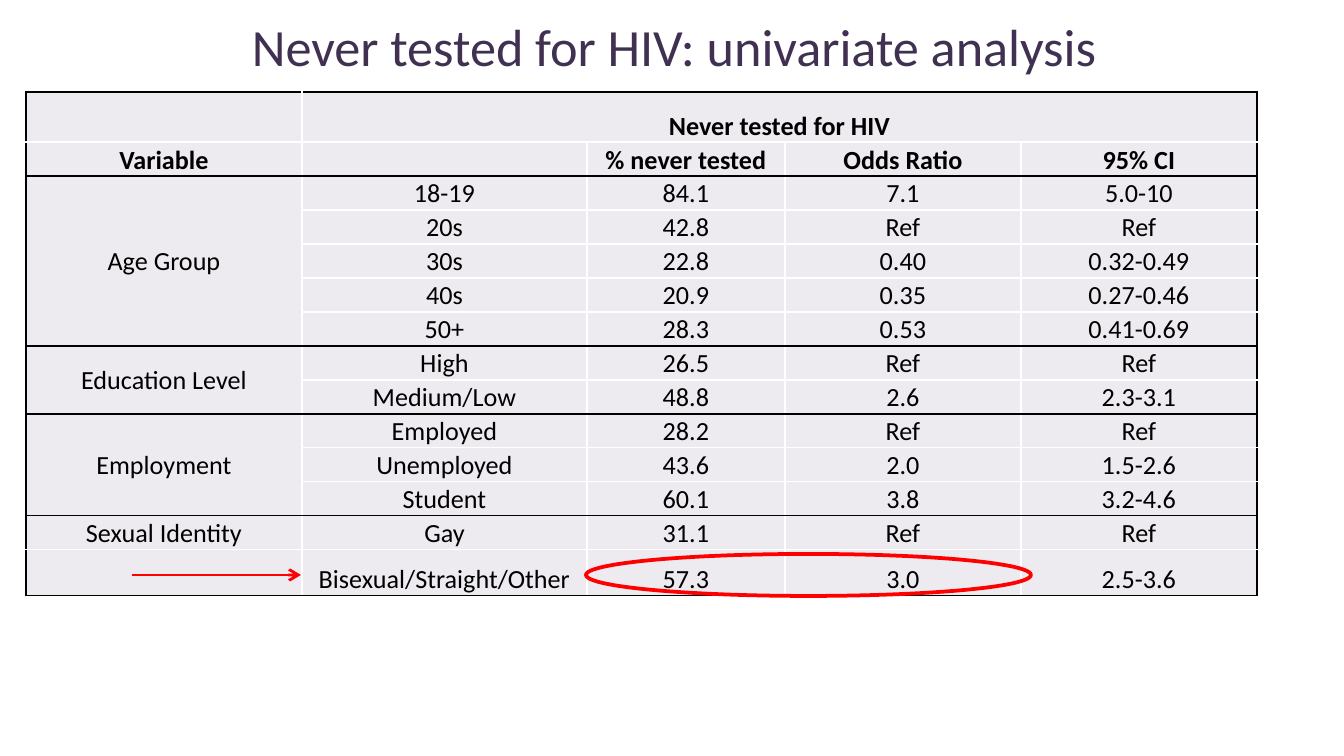
from lxml.etree import SubElement
from pptx import Presentation
from pptx.dml.color import RGBColor
from pptx.enum.shapes import MSO_CONNECTOR as Connector, MSO_SHAPE as Shape
from pptx.enum.text import MSO_ANCHOR as Anchor, PP_ALIGN as Align
from pptx.oxml.ns import qn
from pptx.util import Emu, Pt

PX_PER_INCH = 134.4
FONT = "Calibri"
BLACK = RGBColor(0x00, 0x00, 0x00)
WHITE = RGBColor(0xFF, 0xFF, 0xFF)
PURPLE = RGBColor(0x40, 0x31, 0x52)
LAVENDER = RGBColor(0xED, 0xEA, 0xF0)
RED = RGBColor(0xFF, 0x00, 0x00)

COLUMN_WIDTHS = [276, 285, 198, 236, 236]
ROW_HEIGHTS = [50] + [34] * 12 + [46]
HEADER_ROWS = 2
SECTION_STARTS = {0, 2, 7, 9, 12, len(ROW_HEIGHTS)}
MERGES = [(0, 1, 0, 4), (2, 0, 6, 0), (7, 0, 8, 0), (9, 0, 11, 0)]
ROWS = [
    ["", "Never tested for HIV", "", "", ""],
    ["Variable", "", "% never tested", "Odds Ratio", "95% CI"],
    ["Age Group", "18-19", "84.1", "7.1", "5.0-10"],
    ["", "20s", "42.8", "Ref", "Ref"],
    ["", "30s", "22.8", "0.40", "0.32-0.49"],
    ["", "40s", "20.9", "0.35", "0.27-0.46"],
    ["", "50+", "28.3", "0.53", "0.41-0.69"],
    ["Education Level", "High", "26.5", "Ref", "Ref"],
    ["", "Medium/Low", "48.8", "2.6", "2.3-3.1"],
    ["Employment", "Employed", "28.2", "Ref", "Ref"],
    ["", "Unemployed", "43.6", "2.0", "1.5-2.6"],
    ["", "Student", "60.1", "3.8", "3.2-4.6"],
    ["Sexual Identity", "Gay", "31.1", "Ref", "Ref"],
    ["", "Bisexual/Straight/Other", "57.3", "3.0", "2.5-3.6"],
]


def px(length):
    return Emu(round(length * 914400 / PX_PER_INCH))


def style_paragraph(paragraph, size, color, bold=False):
    paragraph.alignment = Align.CENTER
    font = paragraph.font
    font.name, font.size, font.bold = FONT, Pt(size), bold
    font.color.rgb = color


def add_title(slide, text):
    box = slide.shapes.add_textbox(px(69), px(0), px(1210), px(92))
    frame = box.text_frame
    frame.word_wrap = True
    frame.vertical_anchor = Anchor.MIDDLE
    frame.text = text
    style_paragraph(frame.paragraphs[0], 28, PURPLE)


def set_borders(cell, row, column):
    """Black around the table and between sections, white elsewhere."""
    next_row = row + max(cell.span_height, 1)
    next_column = column + max(cell.span_width, 1)
    is_black = {
        "a:lnL": column == 0,
        "a:lnR": next_column == len(COLUMN_WIDTHS),
        "a:lnT": row in SECTION_STARTS,
        "a:lnB": next_row in SECTION_STARTS,
    }
    properties = cell._tc.get_or_add_tcPr()
    for tag, black in is_black.items():
        line = SubElement(properties, qn(tag), w=str(Pt(1)))
        fill = SubElement(line, qn("a:solidFill"))
        SubElement(fill, qn("a:srgbClr"), val=str(BLACK if black else WHITE))


def fill_cell(cell, row, column, text):
    cell.text = text
    cell.margin_left = cell.margin_right = cell.margin_top = px(1)
    cell.margin_bottom = 0
    in_label_column = column == 0 and row >= HEADER_ROWS
    cell.vertical_anchor = Anchor.MIDDLE if in_label_column else Anchor.BOTTOM
    paragraph = cell.text_frame.paragraphs[0]
    style_paragraph(paragraph, 14, BLACK, bold=row < HEADER_ROWS)
    # Empty cells take their line height from the end-of-paragraph size.
    paragraph._p.get_or_add_endParaRPr().set("sz", "1400")
    set_borders(cell, row, column)
    cell.fill.solid()
    cell.fill.fore_color.rgb = LAVENDER


def add_results_table(slide):
    frame = slide.shapes.add_table(
        len(ROWS), len(COLUMN_WIDTHS), px(26), px(92),
        px(sum(COLUMN_WIDTHS)), px(sum(ROW_HEIGHTS)))
    table = frame.table
    table.first_row = table.horz_banding = False
    for column, width in zip(table.columns, COLUMN_WIDTHS):
        column.width = px(width)
    for row, height in zip(table.rows, ROW_HEIGHTS):
        row.height = px(height)
    for top, left, bottom, right in MERGES:
        table.cell(top, left).merge(table.cell(bottom, right))
    for row, texts in enumerate(ROWS):
        for column, text in enumerate(texts):
            fill_cell(table.cell(row, column), row, column, text)


def add_highlight_ellipse(slide, left, top, width, height):
    ellipse = slide.shapes.add_shape(
        Shape.OVAL, px(left), px(top), px(width), px(height))
    ellipse.shadow.inherit = False
    ellipse.fill.background()
    ellipse.line.color.rgb = RED
    ellipse.line.width = Pt(2)


def add_arrow(slide, start_x, end_x, y):
    arrow = slide.shapes.add_connector(
        Connector.STRAIGHT, px(start_x), px(y), px(end_x), px(y))
    arrow.line.color.rgb = RED
    arrow.line.width = Pt(1.5)
    SubElement(arrow.line._get_or_add_ln(), qn("a:tailEnd"), type="arrow")
    SubElement(arrow._element.spPr, qn("a:effectLst"))


def main():
    presentation = Presentation()
    presentation.slide_width, presentation.slide_height = px(1344), px(756)
    slide = presentation.slides.add_slide(presentation.slide_layouts[6])
    add_title(slide, "Never tested for HIV: univariate analysis")
    add_results_table(slide)
    add_highlight_ellipse(slide, 586, 554, 445, 42)
    add_arrow(slide, 132, 301, 575)
    presentation.save("out.pptx")


if __name__ == "__main__":
    main()
